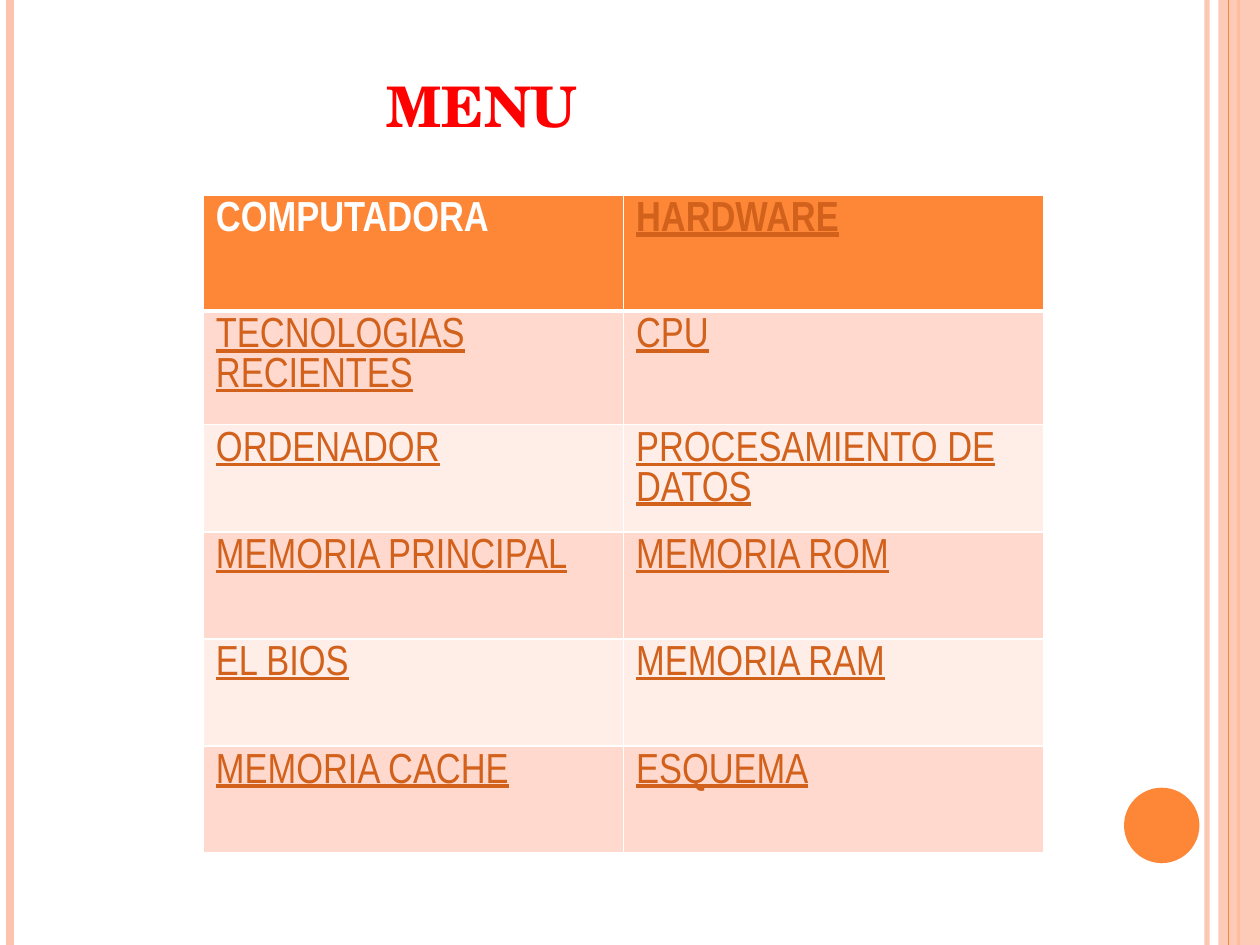
"""Build the MENU slide: a title, a topic table and the side bars."""
from lxml.etree import SubElement
from pptx import Presentation
from pptx.dml.color import RGBColor
from pptx.enum.shapes import MSO_CONNECTOR, MSO_SHAPE
from pptx.enum.text import MSO_ANCHOR, MSO_AUTO_SIZE, PP_ALIGN
from pptx.oxml.ns import qn
from pptx.util import Cm, Pt

WHITE = RGBColor(0xFF, 0xFF, 0xFF)
RED = RGBColor(0xFF, 0x00, 0x00)
ORANGE = RGBColor(0xFE, 0x86, 0x37)
PEACH = RGBColor(0xFE, 0xC3, 0xAE)
RUST = RGBColor(0xD2, 0x61, 0x1C)
BANDS = (RGBColor(0xFF, 0xED, 0xE8), RGBColor(0xFF, 0xD9, 0xCE))

WIDE, HIGH = 25.4, 19.05
TITLE = "MENU"
TOPICS = [
    ("COMPUTADORA", "HARDWARE"),
    ("TECNOLOGIAS RECIENTES", "CPU"),
    ("ORDENADOR", "PROCESAMIENTO DE DATOS"),
    ("MEMORIA PRINCIPAL", "MEMORIA ROM"),
    ("EL BIOS", "MEMORIA RAM"),
    ("MEMORIA CACHE", "ESQUEMA"),
]
ROWS = (2.34, 2.29, 2.16, 2.16, 2.16, 2.16)
COL = 8.47
BARS = [
    (24.33, PEACH, 3, 93),
    (0.2, PEACH, 4.5, 100),
    (24.97, ORANGE, 1.5, 100),
    (24.77, ORANGE, 0.75, 100),
]
SHAPES = [
    (MSO_SHAPE.RECTANGLE, (24.56, 0, 0.84, HIGH), PEACH, 87),
    (MSO_SHAPE.OVAL, (22.66, 15.88, 1.52, 1.52), ORANGE, 100),
]
HEAD = {"name": "TeX Gyre Schola", "size": Pt(32), "bold": True}
BODY = {"name": "Arial Narrow", "size": Pt(24)}


def style(font, look, color):
    for key, value in look.items():
        setattr(font, key, value)
    font.color.rgb = color


def fade(part, alpha):
    if alpha < 100:
        tint = next(part.iter(qn("a:srgbClr")))
        SubElement(tint, qn("a:alpha"), val=str(alpha * 1000))


def edge(cell, side, width):
    line = SubElement(cell._tc.get_or_add_tcPr(), qn("a:" + side), w=str(Pt(width)))
    fill = SubElement(line, qn("a:solidFill"))
    SubElement(fill, qn("a:srgbClr"), val=str(WHITE))


def add_title(slide):
    title = slide.shapes.title
    box = {"left": Cm(1.9), "top": Cm(1.12), "width": Cm(10), "height": Cm(2)}
    for key, value in box.items():
        setattr(title, key, value)
    frame = title.text_frame
    frame.text = TITLE
    frame.auto_size = MSO_AUTO_SIZE.NONE
    frame.vertical_anchor = MSO_ANCHOR.MIDDLE
    para = frame.paragraphs[0]
    para.alignment = PP_ALIGN.RIGHT
    style(para.runs[0].font, HEAD, RED)


def add_bar(slide, left, color, width, alpha):
    bar = slide.shapes.add_connector(
        MSO_CONNECTOR.STRAIGHT, Cm(left), 0, Cm(left), Cm(HIGH))
    bar.line.color.rgb = color
    bar.line.width = Pt(width)
    fade(bar._element.spPr, alpha)
    SubElement(bar._element.spPr, qn("a:effectLst"))


def add_block(slide, kind, box, color, alpha):
    block = slide.shapes.add_shape(kind, *map(Cm, box))
    block.shadow.inherit = False
    block.fill.solid()
    block.fill.fore_color.rgb = color
    block.line.fill.background()
    fade(block._element.spPr, alpha)


def fill_cell(cell, text, row, col):
    head = row == 0
    for side in ("lnL", "lnR", "lnT", "lnB"):
        thick = (head and side == "lnB") or (row == 1 and side == "lnT")
        edge(cell, side, 3 if thick else 1)
    cell.fill.solid()
    cell.fill.fore_color.rgb = ORANGE if head else BANDS[row % 2]
    cell.text = text
    plain = head and col == 0
    look = {**BODY, "bold": head, "underline": not plain}
    style(cell.text_frame.paragraphs[0].runs[0].font, look, WHITE if plain else RUST)


def add_topics(slide):
    table = slide.shapes.add_table(
        len(TOPICS), 2, Cm(4.1), Cm(3.93), Cm(2 * COL), Cm(sum(ROWS))).table
    for col in table.columns:
        col.width = Cm(COL)
    for row, texts in enumerate(TOPICS):
        table.rows[row].height = Cm(ROWS[row])
        for col, text in enumerate(texts):
            fill_cell(table.cell(row, col), text, row, col)


def main():
    deck = Presentation()
    deck.slide_width, deck.slide_height = Cm(WIDE), Cm(HIGH)
    slide = deck.slides.add_slide(deck.slide_layouts[5])
    for bar in BARS[:3]:
        add_bar(slide, *bar)
    add_block(slide, *SHAPES[0])
    add_bar(slide, *BARS[3])
    add_block(slide, *SHAPES[1])
    add_title(slide)
    add_topics(slide)
    deck.save("out.pptx")


if __name__ == "__main__":
    main()
